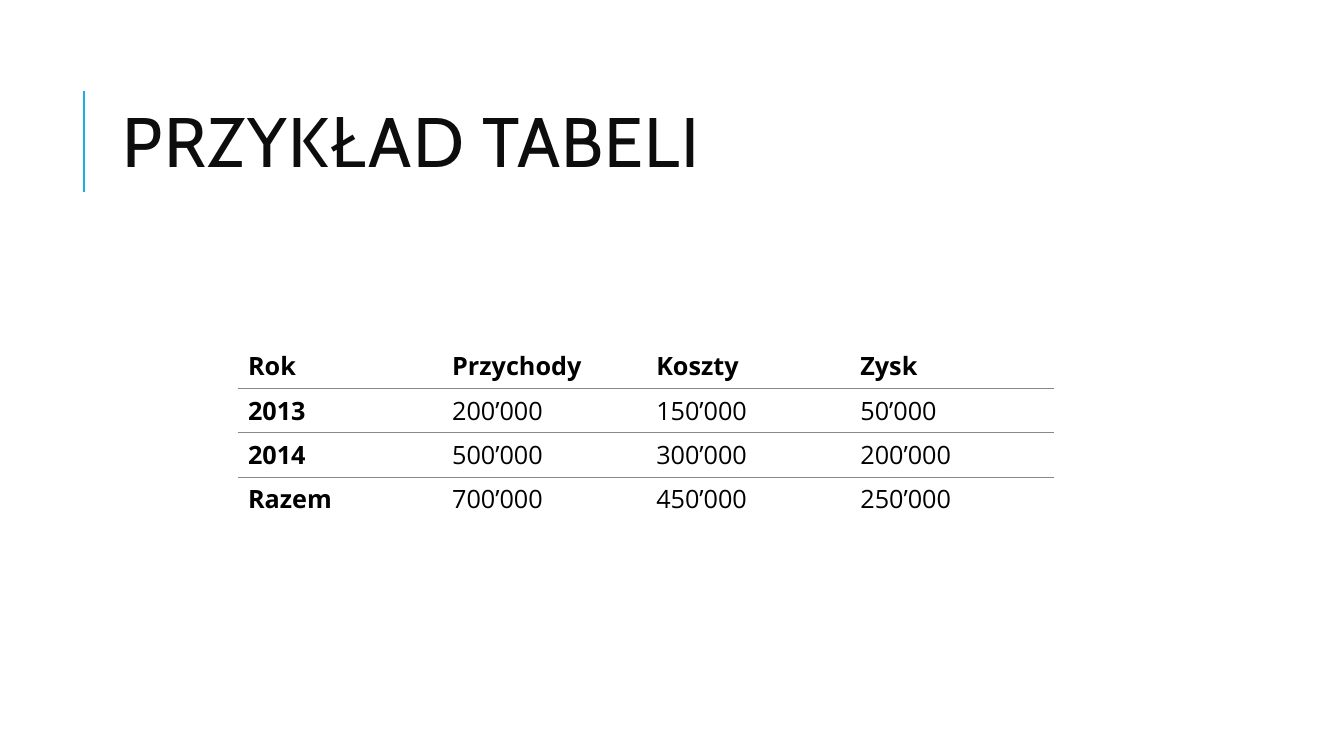
from lxml.etree import SubElement
from pptx import Presentation
from pptx.dml.color import RGBColor
from pptx.enum.shapes import MSO_CONNECTOR
from pptx.enum.text import MSO_ANCHOR, MSO_AUTO_SIZE, PP_ALIGN
from pptx.oxml import parse_xml
from pptx.oxml.ns import nsdecls, qn
from pptx.util import Pt

COLORS = {"accent": "1CADE4", "title": "0D0D0D", "text": "000000", "rule": "888888"}
NO_STYLE_NO_GRID = "{2D5ABB26-0587-4C30-8999-92F81FD0307C}"
ROWS = [
    ["Rok", "Przychody", "Koszty", "Zysk"],
    ["2013", "200’000", "150’000", "50’000"],
    ["2014", "500’000", "300’000", "200’000"],
    ["Razem", "700’000", "450’000", "250’000"],
]
RULED_ROWS = (1, 3)  # rows with a rule above them
COLUMN_WIDTH, ROW_HEIGHT = 145.8, 31.7


def style_font(font, name, size, color):
    font.name = name
    font.size = Pt(size)
    font.color.rgb = RGBColor.from_string(COLORS[color])


def add_border(cell, side):
    border = parse_xml(
        f'<a:{side} {nsdecls("a")} w="{Pt(0.6)}"><a:solidFill>'
        f'<a:srgbClr val="{COLORS["rule"]}"/></a:solidFill></a:{side}>'
    )
    cell._tc.get_or_add_tcPr().insert(0, border)


presentation = Presentation()
presentation.slide_width, presentation.slide_height = Pt(960), Pt(540)
slide = presentation.slides.add_slide(presentation.slide_layouts[5])

# Accent line beside the title
accent = slide.shapes.add_connector(MSO_CONNECTOR.STRAIGHT, Pt(60), Pt(137), Pt(60), Pt(65))
accent.line.color.rgb = RGBColor.from_string(COLORS["accent"])
accent.line.width = Pt(1.5)
SubElement(accent._element.spPr, qn("a:effectLst"))

# Title
title = slide.shapes.title
title.left, title.top, title.width, title.height = Pt(80.6), Pt(46), Pt(765.4), Pt(118)
title.text_frame.text = "PRZYKŁAD TABELI"
title.text_frame.auto_size = MSO_AUTO_SIZE.NONE
title.text_frame.vertical_anchor = MSO_ANCHOR.MIDDLE
paragraph = title.text_frame.paragraphs[0]
paragraph.alignment = PP_ALIGN.LEFT
paragraph.line_spacing = 0.8
style_font(paragraph.font, "Cabin", 50, "title")
paragraph.runs[0]._r.get_or_add_rPr().set("spc", "100")

# Table
frame = slide.shapes.add_table(
    len(ROWS), len(ROWS[0]), Pt(170), Pt(245.5),
    Pt(COLUMN_WIDTH * len(ROWS[0])), Pt(ROW_HEIGHT * len(ROWS)),
)
table = frame.table
table.horz_banding = False
table._tbl.tblPr.find(qn("a:tableStyleId")).text = NO_STYLE_NO_GRID
for column in table.columns:
    column.width = Pt(COLUMN_WIDTH)

for row_index, values in enumerate(ROWS):
    table.rows[row_index].height = Pt(ROW_HEIGHT)
    for column_index, value in enumerate(values):
        cell = table.cell(row_index, column_index)
        cell.text = value
        cell.vertical_anchor = MSO_ANCHOR.MIDDLE
        cell.fill.background()
        paragraph = cell.text_frame.paragraphs[0]
        style_font(paragraph.font, "Open Sans", 18, "text")
        paragraph.font.bold = row_index == 0 or column_index == 0
        if row_index in RULED_ROWS:
            add_border(cell, "lnT")
        if row_index + 1 in RULED_ROWS:
            add_border(cell, "lnB")

presentation.save("out.pptx")
